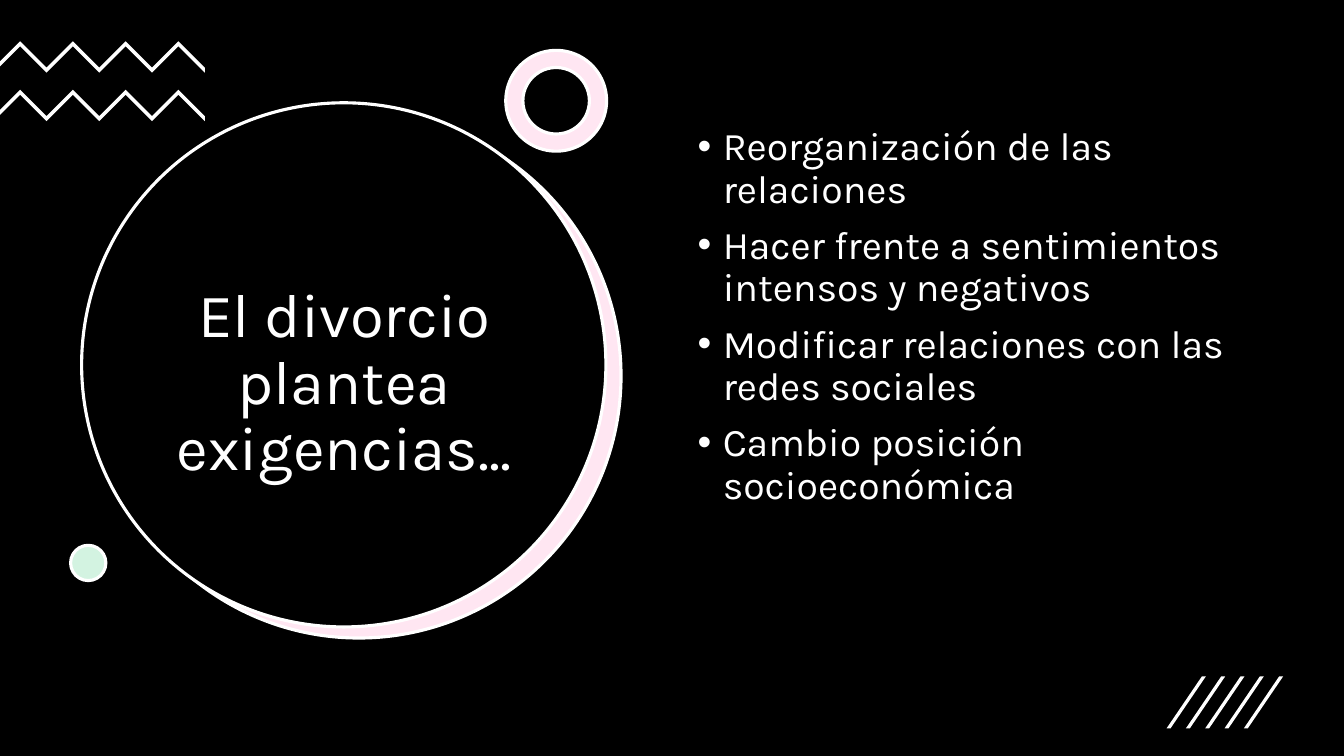
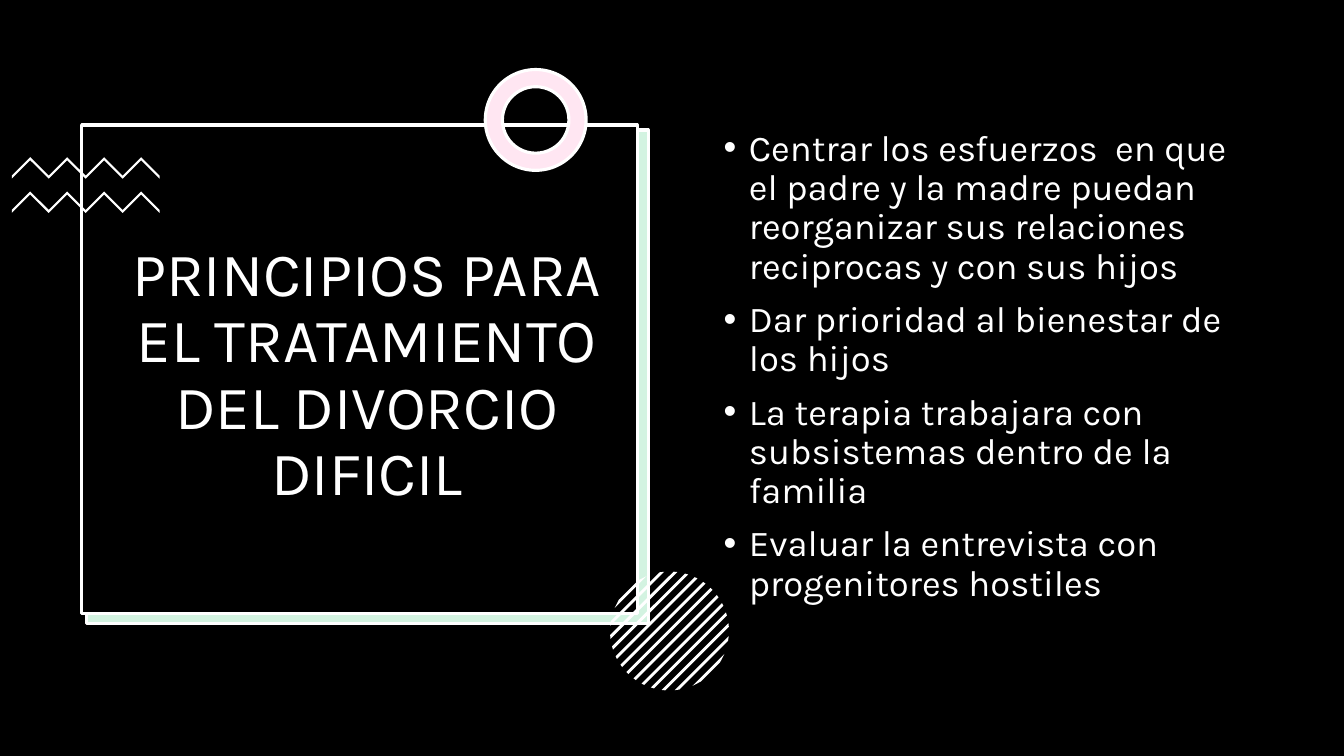
import math

from lxml import etree
from pptx import Presentation
from pptx import util as u
from pptx.dml.color import RGBColor
from pptx.enum import shapes, text
from pptx.oxml import ns

COLOURS = {"ground": "000000", "ink": "FFFFFF", "pink": "FFE6F2", "mint": "D3F3E1"}
FONT = "Karla"
WIDTH, HEIGHT = u.Inches(13.33), u.Inches(7.5)
CELL = HEIGHT / 45  # the slide is a grid of 80 by 45 square cells
OUTLINE = u.Pt(2.25)
KIND = shapes.MSO_SHAPE


def cells(*counts):
    return [round(count * CELL) for count in counts]


def colour(name):
    return RGBColor.from_string(COLOURS[name])


def paint(shape, fill, outlined):
    shape.shadow.inherit = False
    shape.fill.solid()
    shape.fill.fore_color.rgb = colour(fill)
    if outlined:
        shape.line.color.rgb = colour("ink")
        shape.line.width = OUTLINE
    else:
        shape.line.fill.background()


def add_preset(page, kind, area, fill, outlined=True, adjust=None):
    shape = page.shapes.add_shape(kind, *cells(*area))
    if adjust is not None:
        shape.adjustments[0] = adjust
    paint(shape, fill, outlined)


def add_polygon(page, points):
    start, *others = [cells(*point) for point in points]
    builder = page.shapes.build_freeform(*start)
    builder.add_line_segments(others, close=True)
    paint(builder.convert_to_shape(), "ink", outlined=False)


def add_offset_pair(page, kind, back, front, tint):
    """A black panel over a tinted one that peeps out at the lower right."""
    add_preset(page, kind, back, tint)
    add_preset(page, kind, front, "ground")


def add_zigzags(page, first_peak, top, step, gap, thickness):
    """Two four-peaked ribbons, cut off at the slide's left edge."""
    for ribbon_top in (top, top + gap):
        upper = []
        for i in range(-1, 8):
            x = max(0, first_peak + i * step)
            drop = first_peak - x if i < 0 else step * (i % 2)
            upper.append((x, ribbon_top + drop))
        lower = [(x, y + thickness) for x, y in reversed(upper)]
        add_polygon(page, upper + lower)


def add_ring(page, left, top):
    add_preset(page, KIND.DONUT, (left, top, 6, 6), "pink", adjust=0.17)


def add_slashes(page, left, top, step):
    for i in range(5):
        area = (left + i * step, top, 2.34, 3.1)
        add_preset(page, KIND.PARALLELOGRAM, area, "ink", outlined=False, adjust=0.9)


def add_hatched_disc(page, centre_x, centre_y, radius, pitch, thickness):
    """Thirteen diagonal stripes, each clipped to the circle."""
    def chord(offset):
        half = math.sqrt(radius ** 2 - offset ** 2)
        return [(centre_x + (offset + side) / math.sqrt(2),
                 centre_y + (offset - side) / math.sqrt(2)) for side in (half, -half)]

    for i in range(-6, 7):
        near = chord(i * pitch - thickness / 2)
        far = chord(i * pitch + thickness / 2)
        add_polygon(page, near + far[::-1])


def add_bullet(para):
    props = para._p.get_or_add_pPr()
    indent = u.Inches(0.25)
    props.set("marL", str(indent))
    props.set("indent", str(-indent))
    etree.SubElement(props, ns.qn("a:buFont")).set("typeface", "Arial")
    etree.SubElement(props, ns.qn("a:buChar")).set("char", "•")


def add_text(page, area, lines, size, bulleted=False):
    frame = page.shapes.add_textbox(*cells(*area)).text_frame
    frame.word_wrap = True
    frame.vertical_anchor = text.MSO_ANCHOR.TOP if bulleted else text.MSO_ANCHOR.MIDDLE
    for i, line in enumerate(lines):
        para = frame.add_paragraph() if i else frame.paragraphs[0]
        para.text = line
        para.line_spacing = 0.9
        if bulleted:
            para.space_before = u.Pt(10)
            add_bullet(para)
        else:
            para.alignment = text.PP_ALIGN.CENTER
        para.font.name = FONT
        para.font.size = u.Pt(size)
        para.font.color.rgb = colour("ink")


def add_title(page, area, title):
    add_text(page, area, [title], 44)


def add_page(deck):
    page = deck.slides.add_slide(deck.slide_layouts[6])
    page.background.fill.solid()
    page.background.fill.fore_color.rgb = colour("ground")
    return page


def build_demands(deck):
    page = add_page(deck)
    add_offset_pair(page, KIND.OVAL, (5.76, 6.78, 31.2, 31.2),
                    (4.86, 6.12, 31.2, 31.2), "pink")
    add_title(page, (7.26, 12.3, 26.46, 21.12), "El divorcio plantea exigencias...")
    add_zigzags(page, first_peak=1.2, top=2.46, step=1.57, gap=2.88, thickness=0.3)
    add_ring(page, 30.1, 3)
    add_preset(page, KIND.OVAL, (4.2, 32.46, 2.1, 2.1), "mint")
    add_text(page, (40.92, 7.26, 36.12, 28.74), [
        "Reorganización de las relaciones",
        "Hacer frente a sentimientos intensos y negativos",
        "Modificar relaciones con las redes sociales",
        "Cambio posición socioeconómica",
    ], 28, bulleted=True)
    add_slashes(page, left=69.42, top=40.26, step=1.15)


def build_principles(deck):
    page = add_page(deck)
    add_offset_pair(page, KIND.RECTANGLE, (5.16, 7.74, 33.42, 29.4),
                    (4.86, 7.44, 33.06, 29.1), "mint")
    add_zigzags(page, first_peak=1.8, top=9.36, step=1.1, gap=2.04, thickness=0.18)
    add_ring(page, 28.88, 4.14)
    add_hatched_disc(page, 39.84, 37.56, radius=3.54, pitch=0.56, thickness=0.17)
    add_title(page, (5.52, 9.12, 32.64, 26.52),
              "PRINCIPIOS PARA EL TRATAMIENTO DEL DIVORCIO DIFICIL")
    add_text(page, (42.48, 7.44, 32.64, 28.56), [
        "Centrar los esfuerzos  en que el padre y la madre puedan reorganizar "
        "sus relaciones reciprocas y con sus hijos",
        "Dar prioridad al bienestar de los hijos",
        "La terapia trabajara con subsistemas dentro de la familia",
        "Evaluar la entrevista con progenitores hostiles",
    ], 26, bulleted=True)


def main():
    deck = Presentation()
    deck.slide_width, deck.slide_height = WIDTH, HEIGHT
    build_demands(deck)
    build_principles(deck)
    deck.save("out.pptx")


if __name__ == "__main__":
    main()
